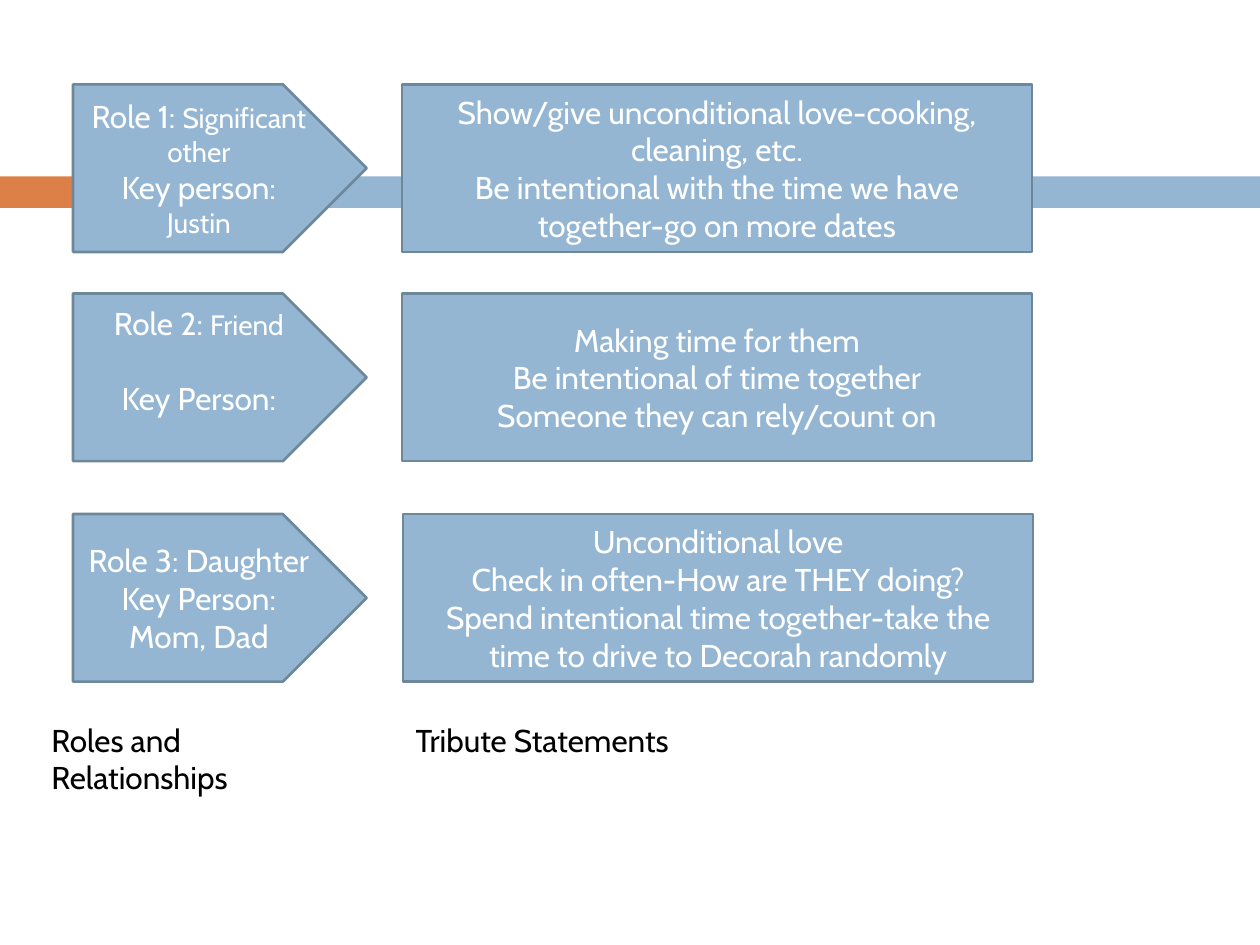
from pptx import Presentation
from pptx.dml.color import RGBColor
from pptx.enum.shapes import MSO_SHAPE
from pptx.enum.text import MSO_ANCHOR, MSO_AUTO_SIZE, PP_ALIGN
from pptx.util import Inches, Pt

COLORS = {"blue": "94B6D2", "outline": "6D879B", "orange": "DD8047",
          "light": "FFFFFF", "dark": "000000"}


class SlideBuilder:
    """Holds the style and the current slide."""
    font = "Cabin"
    size = 18
    line_width = 1.5

    def __init__(self, slide):
        self.s = slide

    def color(self, name):
        return RGBColor.from_string(COLORS[name])

    def fill_text(self, tf, paragraphs, color, align, frame):
        """Fill a frame; each paragraph is (runs, format), each run (text, size)."""
        for name, value in {"word_wrap": True, **frame}.items():
            setattr(tf, name, value)
        for i, (runs, fmt) in enumerate(paragraphs):
            p = tf.add_paragraph() if i else tf.paragraphs[0]
            for name, value in {"alignment": align, **fmt}.items():
                setattr(p, name, value)
            for text, size in runs:
                r = p.add_run()
                r.text = text
                for name, value in {"name": self.font, "size": Pt(size)}.items():
                    setattr(r.font, name, value)
                r.font.color.rgb = self.color(color)

    def shape(self, kind, box, fill):
        sp = self.s.shapes.add_shape(kind, *map(Inches, box))
        sp.shadow.inherit = False
        sp.fill.solid()
        sp.fill.fore_color.rgb = self.color(fill)
        return sp

    def band(self, box, fill):
        self.shape(MSO_SHAPE.RECTANGLE, box, fill).line.fill.background()

    def card(self, kind, box, paragraphs, frame):
        sp = self.shape(kind, box, "blue")
        sp.line.color.rgb = self.color("outline")
        sp.line.width = Pt(self.line_width)
        self.fill_text(sp.text_frame, paragraphs, "light", PP_ALIGN.CENTER,
                       {"vertical_anchor": MSO_ANCHOR.MIDDLE, **frame})

    def label(self, box, text):
        sp = self.s.shapes.add_textbox(*map(Inches, box))
        self.fill_text(sp.text_frame, [([(text, self.size)], {})], "dark",
                       PP_ALIGN.LEFT, {"auto_size": MSO_AUTO_SIZE.SHAPE_TO_FIT_TEXT})


# Each row: top, statement left, role paragraphs, role frame format, statements
ROWS = [
    (0.67, 3.19,
     [([("Role 1: ", 18), ("Significant other", 16)], {}),
      ([("Key person:", 18)], {}),
      ([("Justin", 16)], {})],
     {},
     ["Show/give unconditional love-cooking, cleaning, etc.",
      "Be intentional with the time we have together-go on more dates"]),
    (2.33, 3.19,
     [([("Role 2: ", 18), ("Friend", 16)], {}),
      ([("Key Person:", 18)], {"space_before": Pt(21.6)})],
     {"margin_bottom": Inches(0.32)},
     ["Making time for them",
      "Be intentional of time together",
      "Someone they can rely/count on"]),
    (4.08, 3.2,
     [([("Role 3: Daughter", 18)], {}),
      ([("Key Person:", 18)], {}),
      ([("Mom, Dad", 18)], {})],
     {},
     ["Unconditional love",
      "Check in often-How are THEY doing?",
      "Spend intentional time together-take the time to drive to Decorah randomly"]),
]
ROLE_LEFT, ROLE_WIDTH, STATEMENT_WIDTH, ROW_HEIGHT = 0.58, 2.33, 5, 1.33


def main():
    prs = Presentation()
    prs.slide_width, prs.slide_height = Inches(10), Inches(7.5)
    b = SlideBuilder(prs.slides.add_slide(prs.slide_layouts[6]))

    # Background bands
    b.band((0, 1.4, 0.58, 0.25), "orange")
    b.band((0.65, 1.4, 9.35, 0.25), "blue")

    # Role arrows
    for top, _, role, frame, _ in ROWS:
        b.card(MSO_SHAPE.PENTAGON, (ROLE_LEFT, top, ROLE_WIDTH, ROW_HEIGHT),
               role, frame)

    # Tribute statements
    for top, left, _, _, statements in ROWS:
        b.card(MSO_SHAPE.RECTANGLE, (left, top, STATEMENT_WIDTH, ROW_HEIGHT),
               [([(text, b.size)], {}) for text in statements], {})

    # Column labels
    b.label((0.31, 5.67, 2.61, 0.71), "Roles and Relationships")
    b.label((3.2, 5.67, 3.8, 0.4), "Tribute Statements")

    prs.save("out.pptx")


if __name__ == "__main__":
    main()
